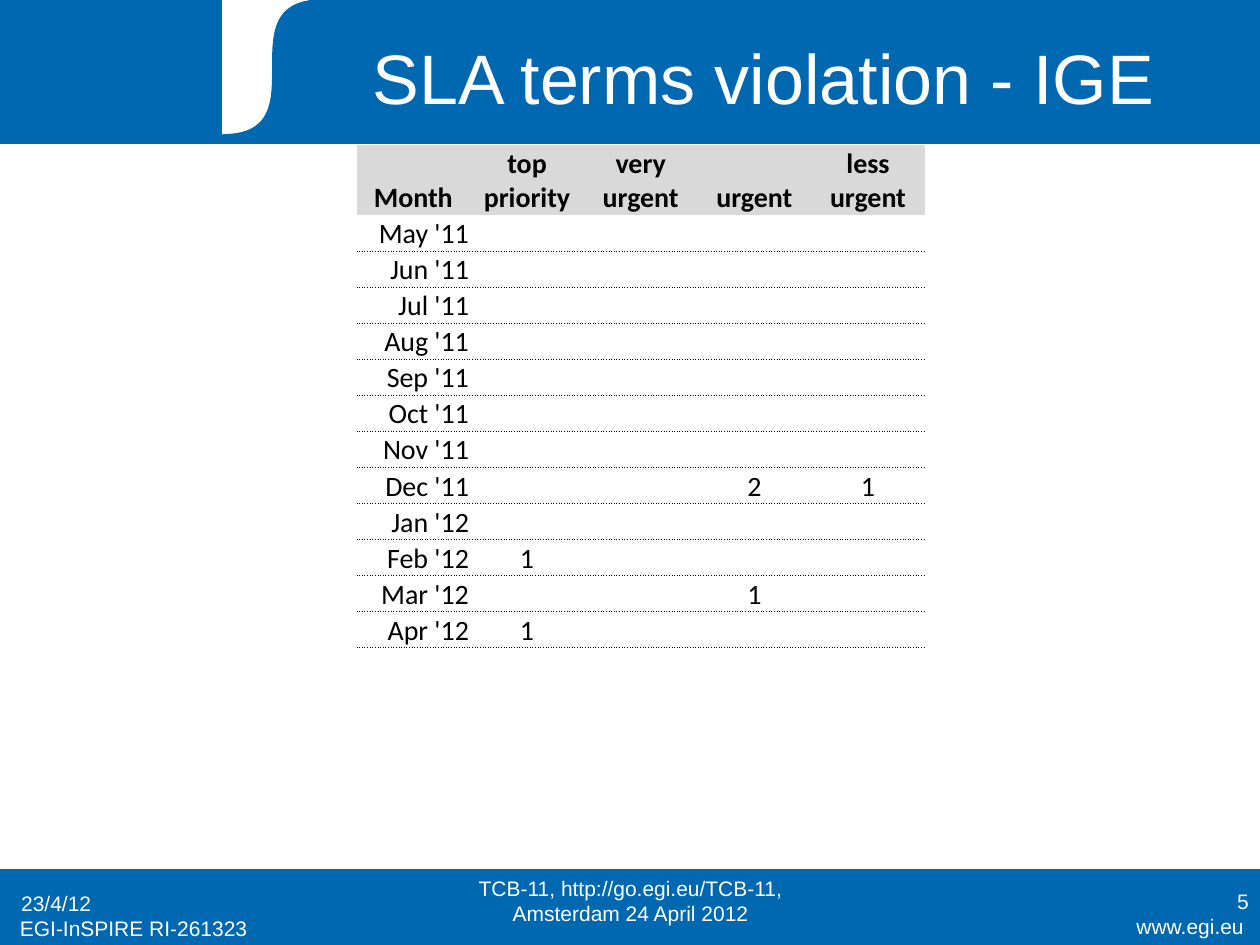
"""Build the slide on SLA terms violation for IGE."""
from lxml import etree
from pptx import Presentation
from pptx.dml.color import RGBColor
from pptx.enum import shapes, text
from pptx.oxml.ns import qn
from pptx.util import Inches, Pt

BLUE, WHITE, BLACK, GRAY = "0067B1", "FFFFFF", "000000", "D9D9D9"
LEFT, CENTER, RIGHT = text.PP_ALIGN.LEFT, text.PP_ALIGN.CENTER, text.PP_ALIGN.RIGHT
TOP, MIDDLE = text.MSO_ANCHOR.TOP, text.MSO_ANCHOR.MIDDLE
NO_STYLE = "{2D5ABB26-0587-4C30-8999-92F81FD0307C}"

BANDS = [
    ((0, 6.9, 10, 0.6), BLUE),
    ((0, 0, 10, 1.14), BLUE),
    ((1.77, 0, 1.97, 1.07), WHITE),
]
CURVE = [(1.77, 1.07), (2.56, 1.07), (1.77, 0), (2.56, 0)]
CURVE_CORNERS = [(3.74, 0), (3.74, 1.07)]
CURVE_STEPS = 40

LABELS = [
    ("www.egi.eu", (8.39, 7.2, 1.58, 0.31), 12, RIGHT, TOP),
    ("EGI-InSPIRE RI-261323", (0.06, 7.22, 2.5, 0.31), 12, LEFT, TOP),
    ("SLA terms violation - IGE", (2.32, 0.13, 7.48, 0.95), 40, CENTER, MIDDLE),
    ("23/4/12", (0.07, 6.97, 2.33, 0.4), 12, LEFT, MIDDLE),
    ("TCB-11, http://go.egi.eu/TCB-11, Amsterdam 24 April 2012",
     (3.42, 6.95, 3.17, 0.4), 12, CENTER, MIDDLE),
    ("5", (7.68, 6.95, 2.33, 0.4), 12, RIGHT, MIDDLE),
]

HEADINGS = ["Month", "top priority", "very urgent", "urgent", "less urgent"]
MONTHS = ["May '11", "Jun '11", "Jul '11", "Aug '11", "Sep '11", "Oct '11",
          "Nov '11", "Dec '11", "Jan '12", "Feb '12", "Mar '12", "Apr '12"]
VIOLATIONS = {
    "Dec '11": {"urgent": "2", "less urgent": "1"},
    "Feb '12": {"top priority": "1"},
    "Mar '12": {"urgent": "1"},
    "Apr '12": {"top priority": "1"},
}
TABLE_LEFT, TABLE_TOP, TABLE_WIDTH = 2.83, 1.15, 4.51
HEADING_HEIGHT, MONTHS_HEIGHT = 0.56, 3.43


def rgb(value):
    return RGBColor.from_string(value)


def inches(values):
    return [Inches(value) for value in values]


def set_all(target, values):
    for name, value in values.items():
        setattr(target, name, value)


def paint(shape, color):
    shape.shadow.inherit = False
    shape.fill.solid()
    shape.fill.fore_color.rgb = rgb(color)
    shape.line.color.rgb = rgb(color)
    shape.line.width = Pt(0.75)


def write(paragraph, words, align, color, font):
    paragraph.alignment = align
    if words:
        run = paragraph.add_run()
        run.text = words
        set_all(run.font, font)
        run.font.color.rgb = rgb(color)
    else:
        etree.SubElement(paragraph._p, qn("a:endParaRPr"), sz=str(int(font["size"].pt * 100)))


def curve_point(t):
    weights = [(1 - t) ** 3, 3 * t * (1 - t) ** 2, 3 * t ** 2 * (1 - t), t ** 3]
    return [sum(w * point[axis] for w, point in zip(weights, CURVE)) for axis in (0, 1)]


def add_banner(slide):
    for box, color in BANDS:
        paint(slide.shapes.add_shape(shapes.MSO_SHAPE.RECTANGLE, *inches(box)), color)
    outline = [curve_point(step / CURVE_STEPS) for step in range(CURVE_STEPS + 1)] + CURVE_CORNERS
    builder = slide.shapes.build_freeform(*inches(outline[0]))
    builder.add_line_segments([inches(point) for point in outline[1:]], close=True)
    paint(builder.convert_to_shape(), BLUE)


def add_labels(slide):
    for words, box, size, align, anchor in LABELS:
        frame = slide.shapes.add_textbox(*inches(box)).text_frame
        set_all(frame, {"word_wrap": True, "vertical_anchor": anchor})
        write(frame.paragraphs[0], words, align, WHITE, {"name": "Arial", "size": Pt(size)})


def add_dotted_bottom(cell):
    border = etree.Element(qn("a:lnB"), w=str(Pt(0.5)))
    fill = etree.SubElement(border, qn("a:solidFill"))
    etree.SubElement(fill, qn("a:srgbClr"), val=BLACK)
    etree.SubElement(border, qn("a:prstDash"), val="dot")
    cell._tc.get_or_add_tcPr().insert(0, border)


def add_violations(slide):
    rows = [HEADINGS] + [
        [month] + [VIOLATIONS.get(month, {}).get(heading, "") for heading in HEADINGS[1:]]
        for month in MONTHS]
    table = slide.shapes.add_table(
        len(rows), len(HEADINGS),
        *inches((TABLE_LEFT, TABLE_TOP, TABLE_WIDTH, HEADING_HEIGHT + MONTHS_HEIGHT))).table
    set_all(table, {"first_row": False, "horz_banding": False})
    table._tbl.tblPr.find(qn("a:tableStyleId")).text = NO_STYLE
    for column in table.columns:
        column.width = Inches(TABLE_WIDTH / len(HEADINGS))
    margins = {"margin_left": Inches(0.01), "margin_right": Inches(0.01),
               "margin_top": Inches(0.01), "margin_bottom": 0,
               "vertical_anchor": text.MSO_ANCHOR.BOTTOM}
    for r, row in enumerate(rows):
        heading = r == 0
        table.rows[r].height = Inches(HEADING_HEIGHT if heading else MONTHS_HEIGHT / len(MONTHS))
        for c, words in enumerate(row):
            cell = table.cell(r, c)
            set_all(cell, margins)
            if heading:
                cell.fill.solid()
                cell.fill.fore_color.rgb = rgb(GRAY)
            else:
                cell.fill.background()
                add_dotted_bottom(cell)
            align = RIGHT if c == 0 and not heading else CENTER
            write(cell.text_frame.paragraphs[0], words, align, BLACK,
                  {"name": "Calibri", "size": Pt(16), "bold": heading})


def main():
    deck = Presentation()
    set_all(deck, {"slide_width": Inches(10), "slide_height": Inches(7.5)})
    slide = deck.slides.add_slide(deck.slide_layouts[6])
    add_banner(slide)
    add_labels(slide)
    add_violations(slide)
    deck.save("out.pptx")


if __name__ == "__main__":
    main()
